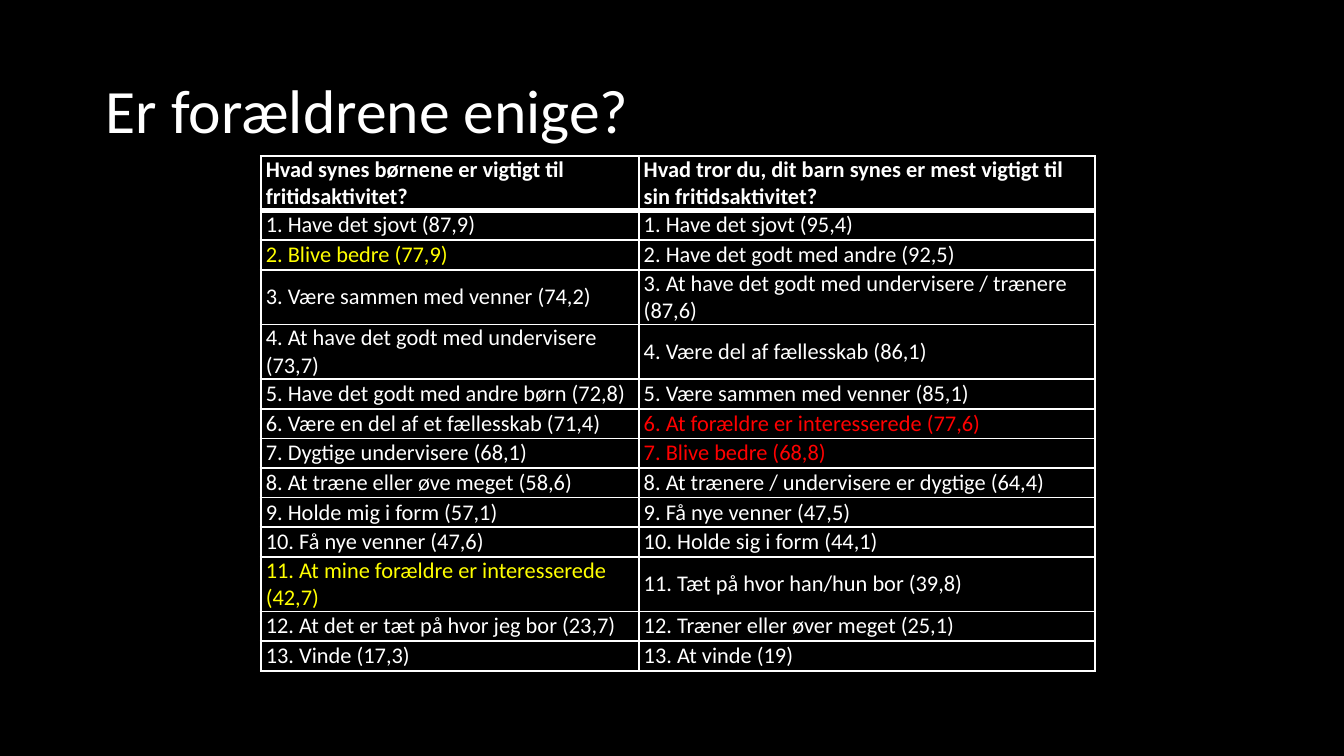
from dataclasses import dataclass

from lxml import etree
from pptx import Presentation
from pptx.dml.color import RGBColor
from pptx.enum import text as t
from pptx.oxml import ns
from pptx.util import Pt


@dataclass(frozen=True)
class Theme:
    font: str = "Calibri"
    back: str = "000000"
    ink: str = "FFFFFF"
    child: str = "FFFF00"
    adult: str = "FF0000"
    head: int = 33
    body: int = 12


theme = Theme()


def write(frame, text, size=theme.body, color=theme.ink, bold=False, pitch=1.0):
    frame.word_wrap = True
    para = frame.paragraphs[0]
    para.alignment = t.PP_ALIGN.LEFT
    para.line_spacing = pitch
    run = para.add_run()
    run.text = text
    run.font.name = theme.font
    run.font.size = Pt(size)
    run.font.bold = bold
    run.font.color.rgb = RGBColor.from_string(color)


def edge(cell, side, width):
    """Draw one border of a cell; side is L, R, T or B."""
    props = cell._tc.get_or_add_tcPr()
    line = etree.SubElement(props, ns.qn(f"a:ln{side}"), w=str(Pt(width)))
    fill = etree.SubElement(line, ns.qn("a:solidFill"))
    etree.SubElement(fill, ns.qn("a:srgbClr"), val=theme.ink)


deck = Presentation()
deck.slide_width, deck.slide_height = Pt(720), Pt(405)
slide = deck.slides.add_slide(deck.slide_layouts[5])
slide.background.fill.solid()
slide.background.fill.fore_color.rgb = RGBColor.from_string(theme.back)

title = slide.shapes.title
title.left, title.top, title.width, title.height = Pt(49.5), Pt(21.6), Pt(621), Pt(78.3)
title.text_frame.auto_size = t.MSO_AUTO_SIZE.NONE
title.text_frame.vertical_anchor = t.MSO_ANCHOR.MIDDLE
write(title.text_frame, "Er forældrene enige?", size=theme.head, pitch=0.9)

heads = (
    "Hvad synes børnene er vigtigt til fritidsaktivitet?",
    "Hvad tror du, dit barn synes er mest vigtigt til sin fritidsaktivitet?",
)
ranks = [
    ("Have det sjovt (87,9)", "Have det sjovt (95,4)"),
    ("Blive bedre (77,9)", "Have det godt med andre (92,5)"),
    ("Være sammen med venner (74,2)", "At have det godt med undervisere / trænere (87,6)"),
    ("At have det godt med undervisere (73,7)", "Være del af fællesskab (86,1)"),
    ("Have det godt med andre børn (72,8)", "Være sammen med venner (85,1)"),
    ("Være en del af et fællesskab (71,4)", "At forældre er interesserede (77,6)"),
    ("Dygtige undervisere (68,1)", "Blive bedre (68,8)"),
    ("At træne eller øve meget (58,6)", "At trænere / undervisere er dygtige (64,4)"),
    ("Holde mig i form (57,1)", "Få nye venner (47,5)"),
    ("Få nye venner (47,6)", "Holde sig i form (44,1)"),
    ("At mine forældre er interesserede (42,7)", "Tæt på hvor han/hun bor (39,8)"),
    ("At det er tæt på hvor jeg bor (23,7)", "Træner eller øver meget (25,1)"),
    ("Vinde (17,3)", "At vinde (19)"),
]
# Marked cells, by rank and column
marks = {(2, 0): theme.child, (11, 0): theme.child,
         (6, 1): theme.adult, (7, 1): theme.adult}
tall = (0, 3, 4, 11)  # rows with two lines of text
rows = [heads, *ranks]

table = slide.shapes.add_table(
    len(rows), 2, Pt(139.7), Pt(83.5), Pt(447), Pt(275)).table
table.horz_banding = False
table.columns[0].width, table.columns[1].width = Pt(202.5), Pt(244.5)

for rank, pair in enumerate(rows):
    table.rows[rank].height = Pt(29 if rank in tall else 15.9)
    for col, text in enumerate(pair):
        cell = table.cell(rank, col)
        cell.margin_left = cell.margin_right = Pt(2.7)
        cell.margin_top = cell.margin_bottom = 0
        cell.vertical_anchor = t.MSO_ANCHOR.MIDDLE
        edge(cell, "L", 1)
        edge(cell, "R", 1)
        edge(cell, "T", 3 if rank == 1 else 1)
        edge(cell, "B", 3 if rank == 0 else 1)
        cell.fill.solid()
        cell.fill.fore_color.rgb = RGBColor.from_string(theme.back)
        write(cell.text_frame, f"{rank}. {text}" if rank else text,
              color=marks.get((rank, col), theme.ink), bold=rank == 0)

deck.save("out.pptx")
